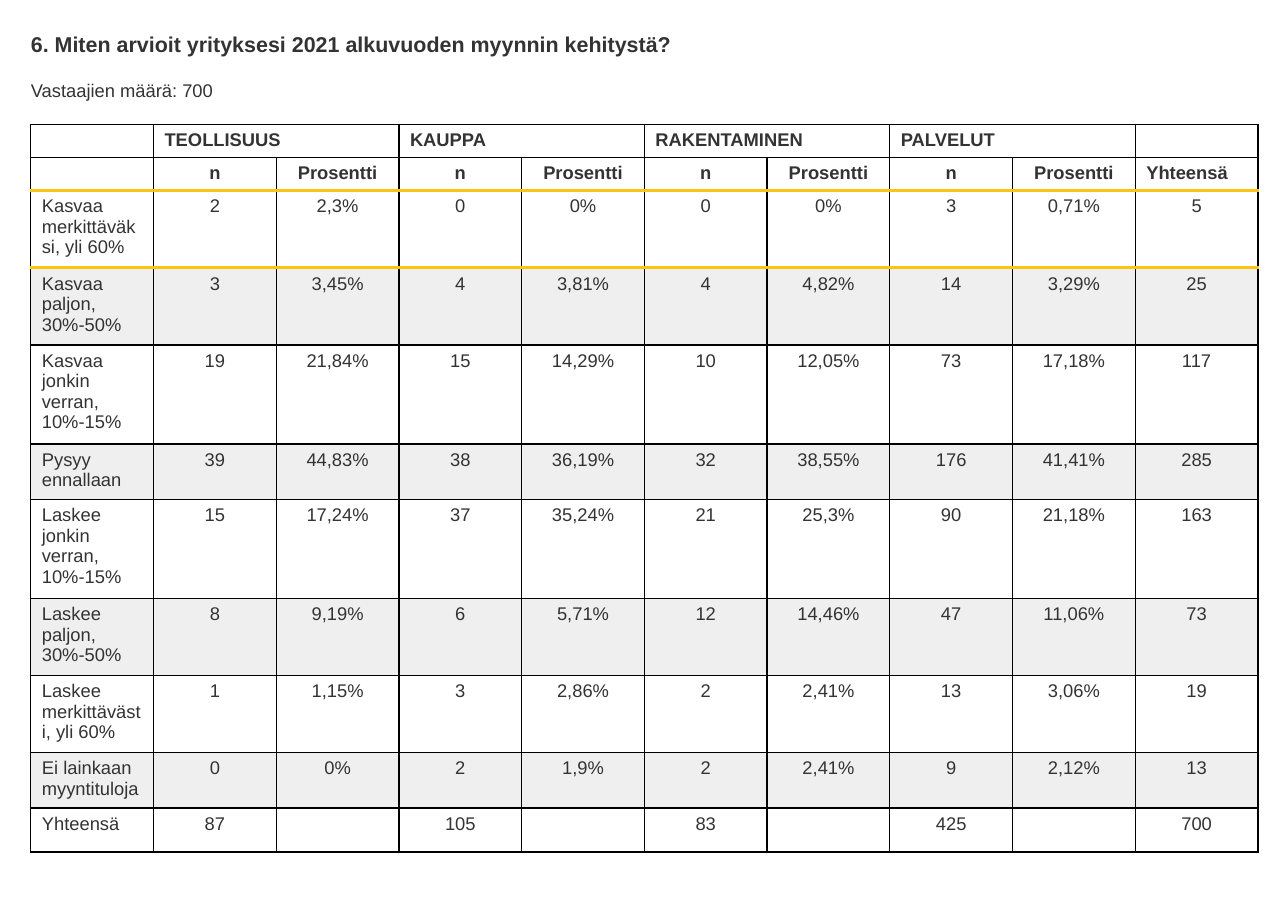
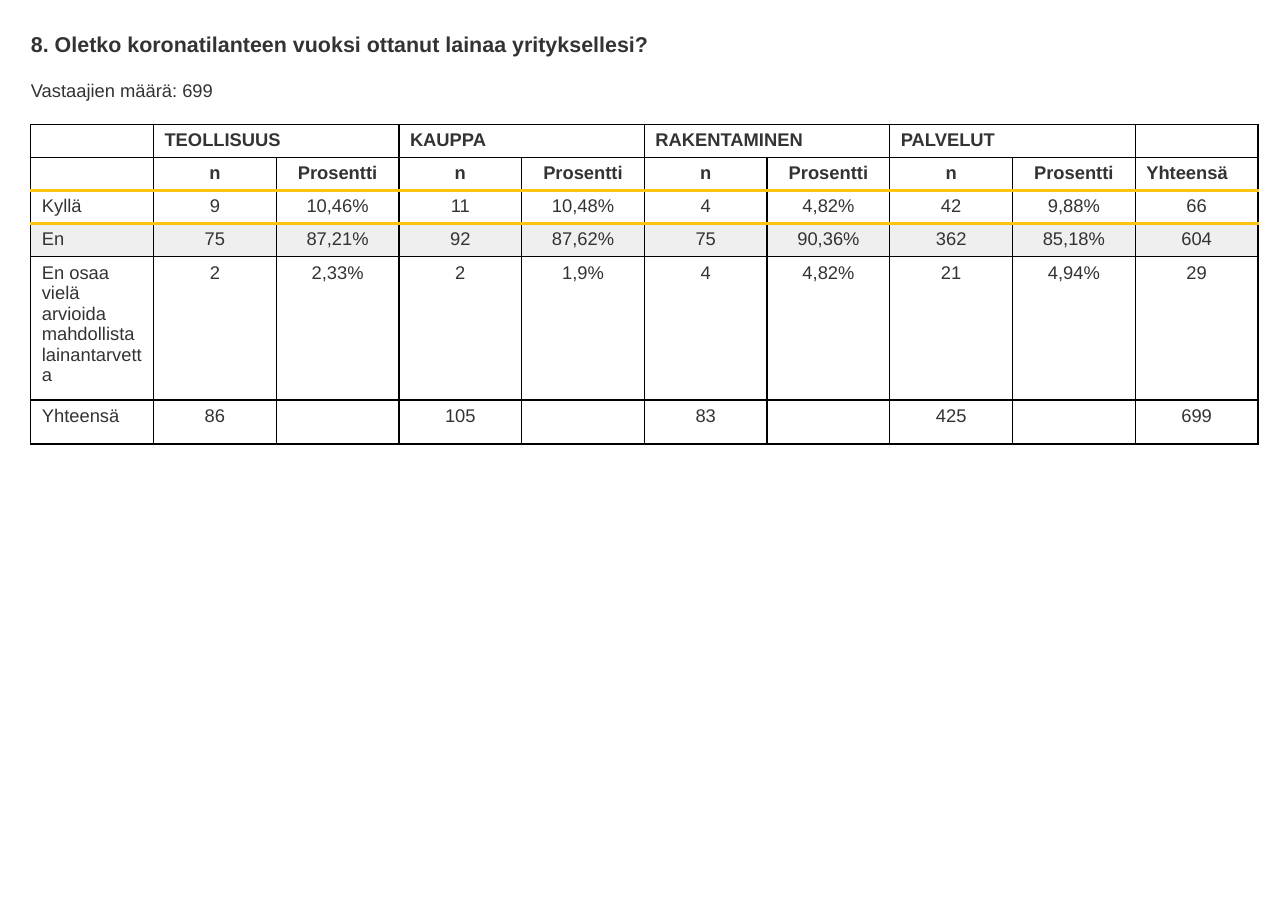
import pptx
import pptx.dml.color
import pptx.enum.text
import pptx.oxml
import pptx.oxml.ns
import pptx.util

Inches = pptx.util.Inches
Pt = pptx.util.Pt
CENTER = pptx.enum.text.PP_ALIGN.CENTER
LEFT = pptx.enum.text.PP_ALIGN.LEFT

SECTORS = ["TEOLLISUUS", "KAUPPA", "RAKENTAMINEN", "PALVELUT"]

SURVEYS = [
    {
        "question": "6. Miten arvioit yrityksesi 2021 alkuvuoden myynnin kehitystä?",
        "respondents": "Vastaajien määrä: 700",
        "answers": [
            ("Kasvaa merkittäväksi, yli 60%", 3, "2;2,3%;0;0%;0;0%;3;0,71%;5"),
            ("Kasvaa paljon, 30%-50%", 3, "3;3,45%;4;3,81%;4;4,82%;14;3,29%;25"),
            ("Kasvaa jonkin verran, 10%-15%", 4, "19;21,84%;15;14,29%;10;12,05%;73;17,18%;117"),
            ("Pysyy ennallaan", 2, "39;44,83%;38;36,19%;32;38,55%;176;41,41%;285"),
            ("Laskee jonkin verran, 10%-15%", 4, "15;17,24%;37;35,24%;21;25,3%;90;21,18%;163"),
            ("Laskee paljon, 30%-50%", 3, "8;9,19%;6;5,71%;12;14,46%;47;11,06%;73"),
            ("Laskee merkittävästi, yli 60%", 3, "1;1,15%;3;2,86%;2;2,41%;13;3,06%;19"),
            ("Ei lainkaan myyntituloja", 2, "0;0%;2;1,9%;2;2,41%;9;2,12%;13"),
        ],
        "totals": "87;;105;;83;;425;;700",
    },
    {
        "question": "8. Oletko koronatilanteen vuoksi ottanut lainaa yrityksellesi?",
        "respondents": "Vastaajien määrä: 699",
        "answers": [
            ("Kyllä", 1, "9;10,46%;11;10,48%;4;4,82%;42;9,88%;66"),
            ("En", 1, "75;87,21%;92;87,62%;75;90,36%;362;85,18%;604"),
            ("En osaa vielä arvioida mahdollista lainantarvetta", 6, "2;2,33%;2;1,9%;4;4,82%;21;4,94%;29"),
        ],
        "totals": "86;;105;;83;;425;;699",
    },
]


def color(value):
    return pptx.dml.color.RGBColor.from_string(value)


class SurveyDeck:
    font = "Arial"
    ink = "333333"
    grid = ("000000", 1)
    accent = ("FFC311", 2)
    paper = "FFFFFF"
    band = "EFEFEF"
    left = 0.28
    table_top = 1.13
    table_width = 11.14
    header_rows = 2
    row_height = 0.3
    line_height = 0.2
    total_height = 0.4

    def __init__(self):
        self.deck = pptx.Presentation()
        self.deck.slide_width = Inches(11.69)
        self.deck.slide_height = Inches(8.27)
        self.page = None

    def add_page(self):
        self.page = self.deck.slides.add_slide(self.deck.slide_layouts[6])

    def add_span(self, para, text, size=12, bold=False, align=LEFT):
        para.alignment = align
        if not text:
            end = pptx.oxml.ns.qn("a:endParaRPr")
            para._p.append(para._p.makeelement(end, {"sz": str(size * 100)}))
            return
        span = para.add_run()
        span.text = text
        span.font.name = self.font
        span.font.size = Pt(size)
        span.font.bold = bold
        span.font.color.rgb = color(self.ink)

    def add_text(self, text, top, height, size, bold=False):
        box = self.page.shapes.add_textbox(Inches(self.left), Inches(top), Inches(11.15), Inches(height))
        frame = box.text_frame
        frame.word_wrap = True
        frame.auto_size = pptx.enum.text.MSO_AUTO_SIZE.SHAPE_TO_FIT_TEXT
        frame.margin_left = frame.margin_right = frame.margin_top = frame.margin_bottom = 0
        self.add_span(frame.paragraphs[0], text, size, bold)

    def set_border(self, cell, side, style):
        value, width = style
        cell._tc.get_or_add_tcPr().append(pptx.oxml.parse_xml(
            f'<a:ln{side} {pptx.oxml.ns.nsdecls("a")} w="{Pt(width)}">'
            f'<a:solidFill><a:srgbClr val="{value}"/></a:solidFill></a:ln{side}>'
        ))

    def fill_cell(self, cell, text, bold, align, fill, top, bottom):
        self.add_span(cell.text_frame.paragraphs[0], text, bold=bold, align=align)
        for side, style in (("L", self.grid), ("R", self.grid), ("T", top), ("B", bottom)):
            self.set_border(cell, side, style)
        cell.fill.solid()
        cell.fill.fore_color.rgb = color(fill)

    def add_survey_table(self, answers, totals):
        sector_row = [""]
        for sector in SECTORS:
            sector_row += [sector, ""]
        sector_row.append("")
        rows = [sector_row, ["", *["n", "Prosentti"] * len(SECTORS), "Yhteensä"]]
        rows += [[label, *values.split(";")] for label, lines, values in answers]
        rows.append(["Yhteensä", *totals.split(";")])

        heights = [self.row_height] * self.header_rows
        heights += [self.row_height + self.line_height * (lines - 1) for label, lines, values in answers]
        heights.append(self.total_height)

        last_row = len(rows) - 1
        last_column = len(sector_row) - 1
        table = self.page.shapes.add_table(
            len(rows), len(sector_row), Inches(self.left), Inches(self.table_top),
            Inches(self.table_width), Inches(sum(heights)),
        ).table
        table.first_row = table.horz_banding = False
        for column in table.columns:
            column.width = Inches(self.table_width / len(sector_row))

        accent_edges = (self.header_rows, self.header_rows + 1)
        for r, texts in enumerate(rows):
            table.rows[r].height = Inches(heights[r])
            header = r < self.header_rows
            banded = not header and r < last_row and (r - self.header_rows) % 2 == 1
            top, bottom = (self.accent if edge in accent_edges else self.grid for edge in (r, r + 1))
            for c, text in enumerate(texts):
                flush_left = c == 0 or r == 0 or (header and c == last_column)
                self.fill_cell(
                    table.cell(r, c), text, header, LEFT if flush_left else CENTER,
                    self.band if banded else self.paper, top, bottom,
                )
        for c in range(1, last_column, 2):
            table.cell(0, c).merge(table.cell(0, c + 1))

    def add_survey(self, survey):
        self.add_page()
        self.add_text(survey["question"], 0.28, 0.23, 14, bold=True)
        self.add_text(survey["respondents"], 0.72, 0.2, 12)
        self.add_survey_table(survey["answers"], survey["totals"])


def main():
    report = SurveyDeck()
    for survey in SURVEYS:
        report.add_survey(survey)
    report.deck.save("out.pptx")


if __name__ == "__main__":
    main()
